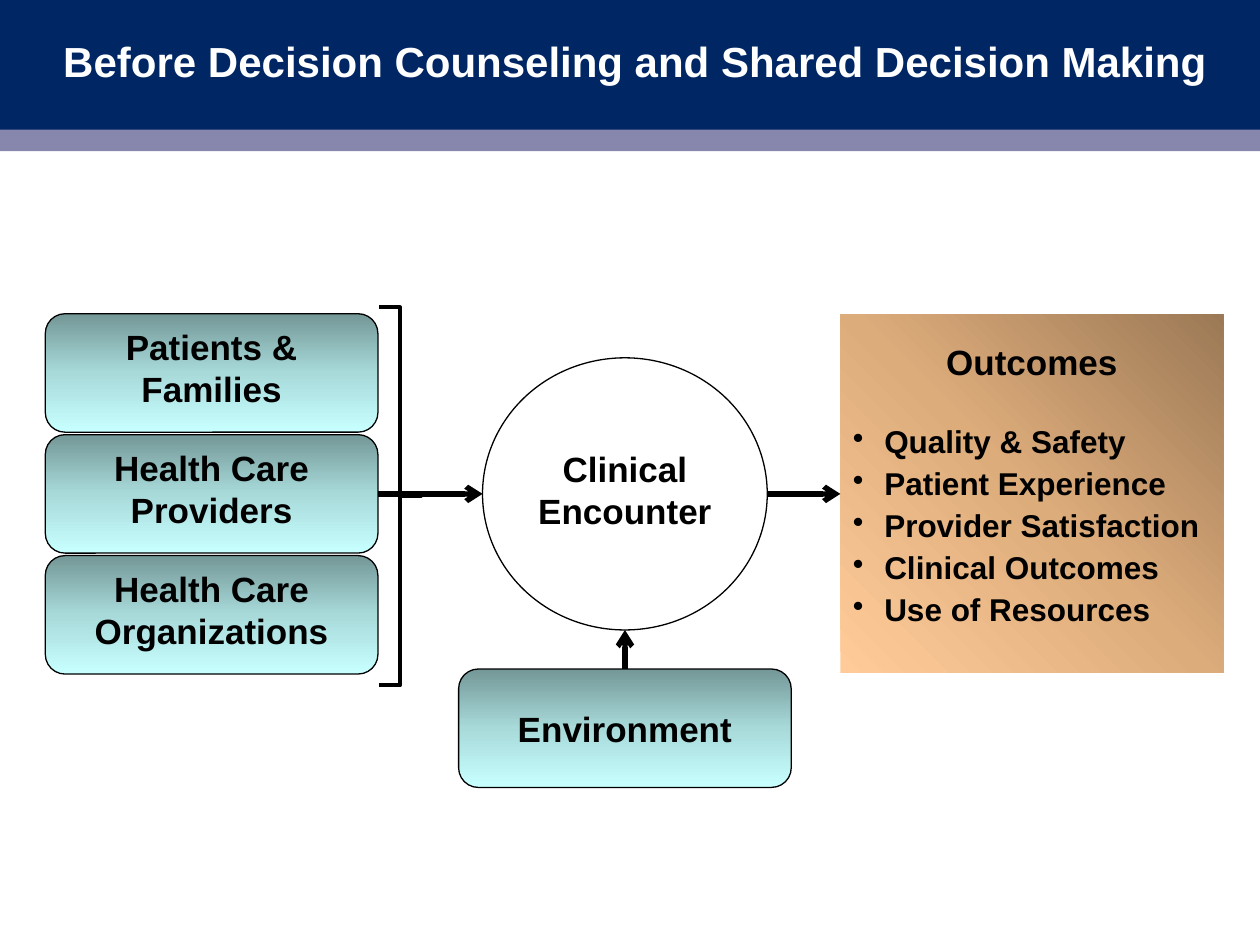
from dataclasses import dataclass

from lxml import etree
from pptx import Presentation
from pptx.dml.color import RGBColor
from pptx.enum.shapes import MSO_CONNECTOR, MSO_SHAPE
from pptx.enum.text import MSO_ANCHOR, PP_ALIGN
from pptx.oxml import parse_xml
from pptx.oxml.ns import qn
from pptx.util import Inches, Pt

DRAWING_NS = "http://schemas.openxmlformats.org/drawingml/2006/main"


@dataclass(frozen=True)
class Theme:
    font: str = "Arial"
    navy: str = "002664"
    lavender: str = "8787AD"
    white: str = "FFFFFF"
    black: str = "000000"
    teal: tuple = ("749797", "A8DADA", "C8FFFF")
    tan: tuple = ("9C7956", "DDAC7B", "FFCC99")
    title: int = 24
    label: int = 20
    bullet: int = 18
    outline: float = 0.75
    bracket: float = 2.25
    arrow: float = 3


@dataclass(frozen=True)
class Box:
    left: float
    top: float
    width: float
    height: float

    @property
    def right(self):
        return self.left + self.width

    @property
    def bottom(self):
        return self.top + self.height

    @property
    def center(self):
        return self.left + self.width / 2

    @property
    def middle(self):
        return self.top + self.height / 2

    def emu(self):
        return [Inches(v) for v in (self.left, self.top, self.width, self.height)]


THEME = Theme()
TO_BOTTOM = '<a:lin ang="5400000" scaled="1"/>'
FROM_TOP_RIGHT = '<a:path path="circle"><a:fillToRect l="100000" b="100000"/></a:path>'


def rgb(color):
    return RGBColor.from_string(color)


def add_shape(slide, kind, box, fill=None, line=None, weight=THEME.outline):
    sp = slide.shapes.add_shape(kind, *box.emu())
    sp.shadow.inherit = False
    if fill:
        sp.fill.solid()
        sp.fill.fore_color.rgb = rgb(fill)
    else:
        sp.fill.background()
    if line:
        sp.line.color.rgb = rgb(line)
        sp.line.width = Pt(weight)
    else:
        sp.line.fill.background()
    return sp


def set_gradient(sp, colors, direction):
    stops = "".join(
        f'<a:gs pos="{i * 50000}"><a:srgbClr val="{color}"/></a:gs>'
        for i, color in enumerate(colors)
    )
    gradient = parse_xml(
        f'<a:gradFill xmlns:a="{DRAWING_NS}" rotWithShape="1">'
        f"<a:gsLst>{stops}</a:gsLst>{direction}</a:gradFill>"
    )
    sp_pr = sp.fill._xPr
    sp_pr.replace(sp_pr.find(qn("a:noFill")), gradient)


def write(p, text, size, color=THEME.black, align=PP_ALIGN.CENTER):
    p.text = text
    p.alignment = align
    p.font.name = THEME.font
    p.font.size = Pt(size)
    p.font.bold = True
    p.font.color.rgb = rgb(color)


def add_bullet(p, indent):
    p_pr = p._p.get_or_add_pPr()
    p_pr.set("marL", str(indent))
    p_pr.set("indent", str(-indent))
    bullet = etree.Element(qn("a:buChar"), char="•")
    p_pr.insert_element_before(bullet, "a:tabLst", "a:defRPr", "a:extLst")


def add_arrow(slide, start, end):
    line = slide.shapes.add_connector(
        MSO_CONNECTOR.STRAIGHT, *(Inches(v) for v in (*start, *end))
    )
    line.line.color.rgb = rgb(THEME.black)
    line.line.width = Pt(THEME.arrow)
    etree.SubElement(line.line._get_or_add_ln(), qn("a:tailEnd"), type="arrow")
    etree.SubElement(line._element.spPr, qn("a:effectLst"))
    return line


def add_header(slide, box, title):
    band = Box(box.left, box.top, box.width, 1.03)
    add_shape(slide, MSO_SHAPE.RECTANGLE, Box(0, box.bottom - 1.03, box.width, 1.03), THEME.lavender)
    add_shape(slide, MSO_SHAPE.RECTANGLE, band, THEME.navy)
    tb = slide.shapes.add_textbox(*Box(box.left + 0.04, box.top + 0.02, box.width, 0.92).emu())
    tf = tb.text_frame
    tf.word_wrap = False
    tf.vertical_anchor = MSO_ANCHOR.MIDDLE
    write(tf.paragraphs[0], title, THEME.title, THEME.white)


def add_factor(slide, box, text, anchor=MSO_ANCHOR.TOP):
    sp = add_shape(slide, MSO_SHAPE.ROUNDED_RECTANGLE, box, line=THEME.black)
    set_gradient(sp, THEME.teal, TO_BOTTOM)
    tf = sp.text_frame
    tf.word_wrap = True
    tf.vertical_anchor = anchor
    write(tf.paragraphs[0], text, THEME.label)
    return sp


def add_participants(slide, box, names):
    gap = 0.02
    height = (box.height - gap * (len(names) - 1)) / len(names)
    factors = [
        add_factor(slide, Box(box.left, box.top + i * (height + gap), box.width, height), name)
        for i, name in enumerate(names)
    ]
    brace_box = Box(box.right + 0.01, box.top - 0.05, 0.33, box.height + 0.14)
    brace = add_shape(slide, MSO_SHAPE.RIGHT_BRACE, brace_box, line=THEME.black, weight=THEME.bracket)
    brace.adjustments[0] = 0
    return factors


def add_encounter(slide, box, lines):
    sp = add_shape(slide, MSO_SHAPE.OVAL, box, THEME.white, THEME.black)
    tf = sp.text_frame
    tf.word_wrap = True
    tf.vertical_anchor = MSO_ANCHOR.MIDDLE
    tf.margin_bottom = Inches(0.12)
    for i, line in enumerate(lines):
        write(tf.add_paragraph() if i else tf.paragraphs[0], line, THEME.label)


def add_outcomes(slide, box, heading, items):
    sp = add_shape(slide, MSO_SHAPE.RECTANGLE, box)
    set_gradient(sp, THEME.tan, FROM_TOP_RIGHT)
    tf = sp.text_frame
    tf.word_wrap = True
    tf.vertical_anchor = MSO_ANCHOR.TOP
    tf.margin_top = Inches(0.24)
    write(tf.paragraphs[0], heading, THEME.label)
    for i, item in enumerate(items):
        p = tf.add_paragraph()
        write(p, item, THEME.bullet, align=PP_ALIGN.LEFT)
        p.space_before = Pt(4.5 if i else 25)
        add_bullet(p, Inches(0.25))
    for p in tf.paragraphs:
        p.line_spacing = 0.9
    return sp


def main():
    prs = Presentation()
    prs.slide_width, prs.slide_height = Inches(10), Inches(7.5)
    slide = prs.slides.add_slide(prs.slide_layouts[6])

    stack = Box(0.36, 2.49, 2.64, 2.86)
    circle = Box(3.83, 2.84, 2.26, 2.16)
    panel = Box(6.67, 2.5, 3.04, 2.84)
    base = Box(3.64, 5.31, 2.64, 0.94)

    add_header(slide, Box(0, 0, 10, 1.2), "Before Decision Counseling and Shared Decision Making")
    participants = add_participants(
        slide, stack,
        ["Patients & Families", "Health Care Providers", "Health Care Organizations"],
    )
    outcomes = add_outcomes(
        slide, panel, "Outcomes",
        ["Quality & Safety", "Patient Experience", "Provider Satisfaction",
         "Clinical Outcomes", "Use of Resources"],
    )
    environment = add_factor(slide, base, "Environment", MSO_ANCHOR.MIDDLE)
    add_encounter(slide, circle, ["Clinical", "Encounter"])

    inputs = add_arrow(slide, (stack.right, stack.middle), (circle.left, circle.middle))
    inputs.begin_connect(participants[1], 3)
    results = add_arrow(slide, (circle.right, circle.middle), (panel.left, panel.middle))
    results.end_connect(outcomes, 1)
    context = add_arrow(slide, (base.center, base.top), (circle.center, circle.bottom))
    context.begin_connect(environment, 0)

    prs.save("out.pptx")


if __name__ == "__main__":
    main()
